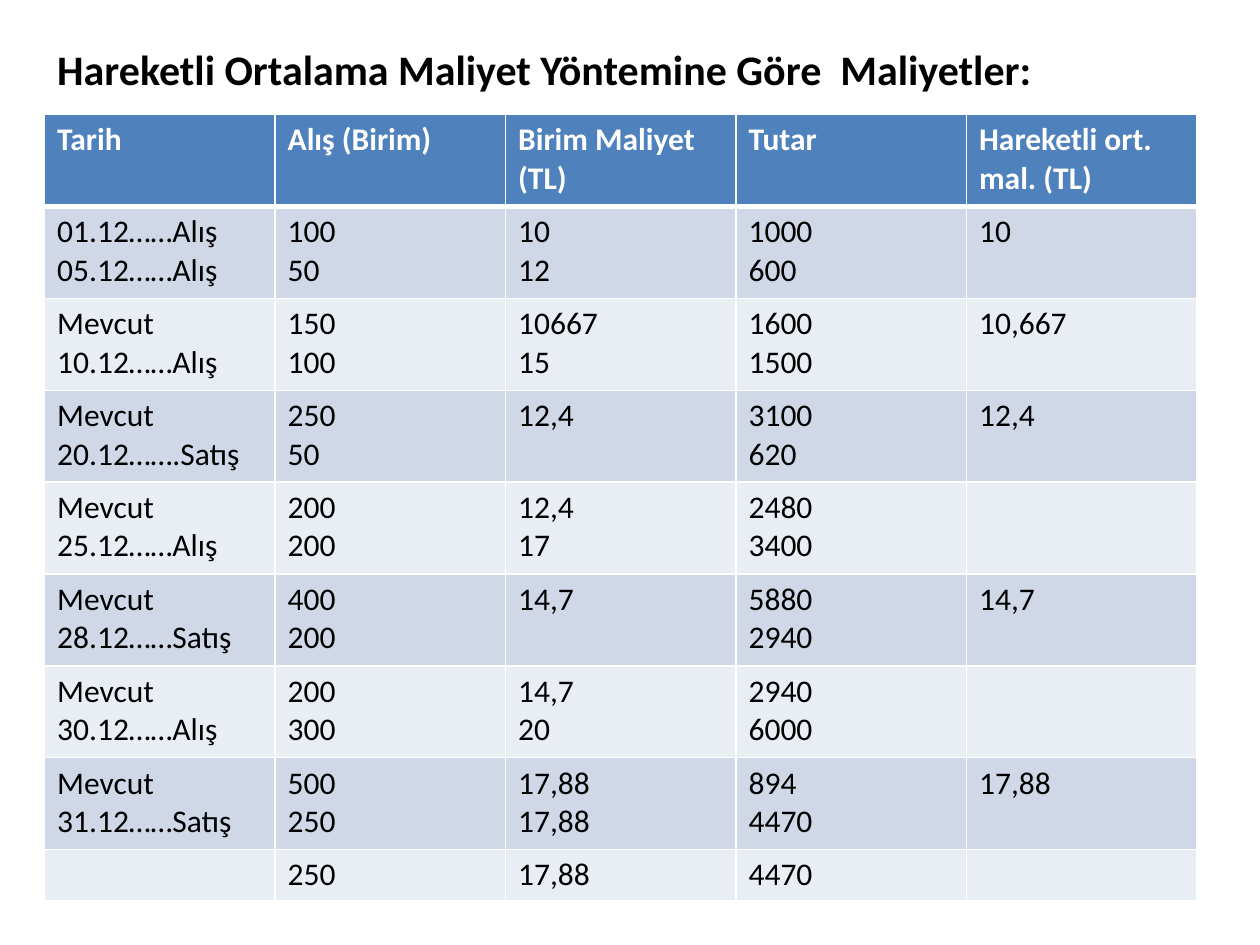
"""Build a slide with the moving average cost table."""
import pptx
import pptx.dml.color
import pptx.enum.text
import pptx.oxml
import pptx.oxml.ns
import pptx.util

Pt = pptx.util.Pt

TITLE = "Hareketli Ortalama Maliyet Yöntemine Göre  Maliyetler:"
ROWS = [
    ("Tarih", "Alış (Birim)", "Birim Maliyet (TL)", "Tutar", "Hareketli ort. mal. (TL)"),
    ("01.12……Alış\n05.12……Alış", "100\n50", "10\n12", "1000\n600", "10"),
    ("Mevcut\n10.12……Alış", "150\n100", "10667\n15", "1600\n1500", "10,667"),
    ("Mevcut\n20.12…….Satış", "250\n50", "12,4", "3100\n620", "12,4"),
    ("Mevcut\n25.12……Alış", "200\n200", "12,4\n17", "2480\n3400", ""),
    ("Mevcut\n28.12……Satış", "400\n200", "14,7", "5880\n2940", "14,7"),
    ("Mevcut\n30.12……Alış", "200\n300", "14,7\n20", "2940\n6000", ""),
    ("Mevcut\n31.12……Satış", "500\n250", "17,88\n17,88", "894\n4470", "17,88"),
    ("", "250", "17,88", "4470", ""),
]
HEAD, BANDS = "4F81BD", ("E9EDF4", "D0D8E8")
LEFT, TOP, WIDTH = 25.5, 65.5, 658.5
TALL, LOW = 52.5, 29


def color(code):
    return pptx.dml.color.RGBColor.from_string(code)


def style(frame, size, code, bold):
    for para in frame.paragraphs:
        font = para.font
        font.name, font.size, font.bold = "Calibri", Pt(size), bold
        font.color.rgb = color(code)


def border(cell, side, width):
    props = cell._tc.get_or_add_tcPr()
    props.append(pptx.oxml.parse_xml(
        f'<a:ln{side} {pptx.oxml.ns.nsdecls("a")} w="{Pt(width)}">'
        f'<a:solidFill><a:srgbClr val="FFFFFF"/></a:solidFill></a:ln{side}>'))


def add_title(slide):
    title = slide.shapes.title
    title.left, title.top = Pt(LEFT), Pt(21)
    title.width, title.height = Pt(641), Pt(36)
    frame = title.text_frame
    frame.text = TITLE
    frame.word_wrap = True
    frame.auto_size = pptx.enum.text.MSO_AUTO_SIZE.NONE
    frame.vertical_anchor = pptx.enum.text.MSO_ANCHOR.TOP
    frame.paragraphs[0].alignment = pptx.enum.text.PP_ALIGN.LEFT
    style(frame, 24, "000000", True)


def add_costs(slide):
    highs = [TALL] * (len(ROWS) - 1) + [LOW]
    count = len(ROWS[0])
    table = slide.shapes.add_table(
        len(ROWS), count, Pt(LEFT), Pt(TOP), Pt(WIDTH), Pt(sum(highs))).table
    for col in table.columns:
        col.width = Pt(WIDTH / count)
    for i, (row, high) in enumerate(zip(ROWS, highs)):
        table.rows[i].height = Pt(high)
        for j, text in enumerate(row):
            cell = table.cell(i, j)
            cell.text = text
            style(cell.text_frame, 18, "000000" if i else "FFFFFF", i == 0)
            for side in "LRTB":
                thick = (i, side) in ((0, "B"), (1, "T"))
                border(cell, side, 3 if thick else 1)
            cell.fill.solid()
            cell.fill.fore_color.rgb = color(BANDS[i % 2] if i else HEAD)


def main():
    deck = pptx.Presentation()
    deck.slide_width, deck.slide_height = Pt(720), Pt(540)
    slide = deck.slides.add_slide(deck.slide_layouts[5])
    add_costs(slide)
    add_title(slide)
    deck.save("out.pptx")


if __name__ == "__main__":
    main()
